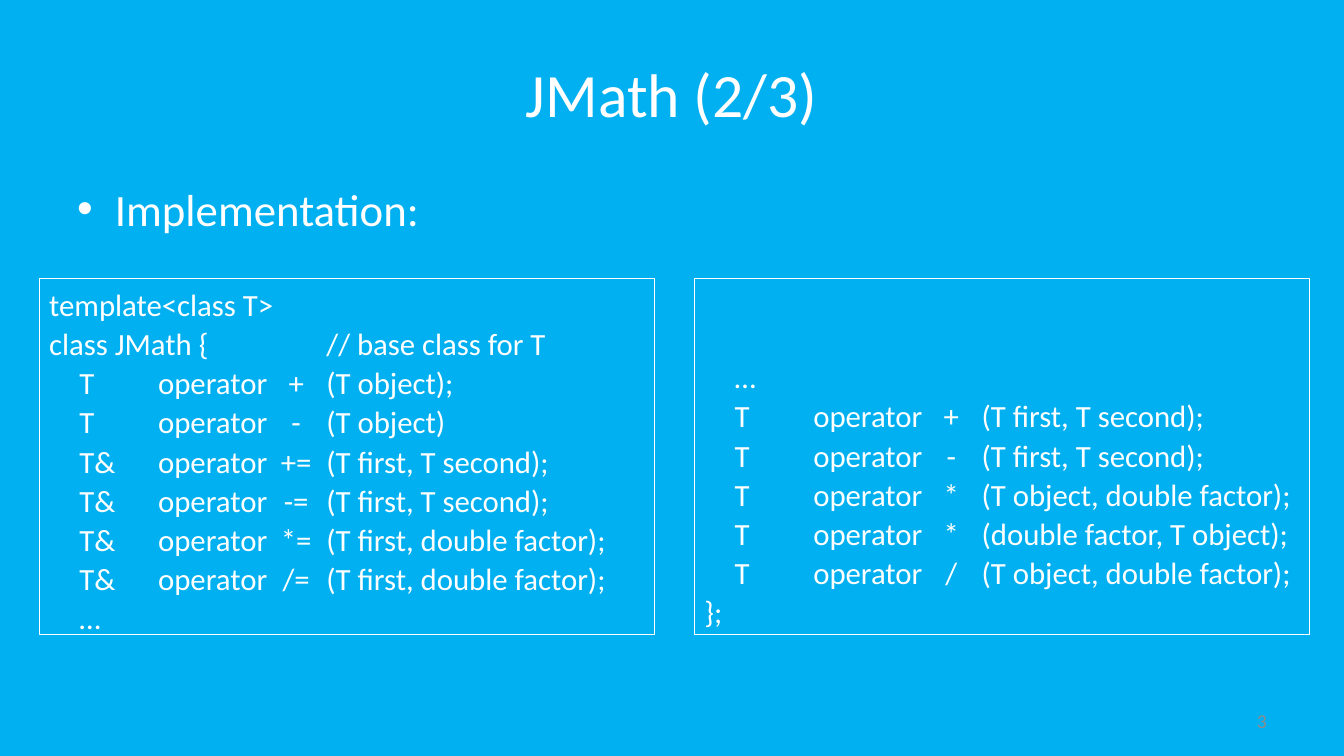
"""Build the JMath (2/3) slide with two framed code listings."""
import pptx
import pptx.util
import pptx.dml.color
import pptx.enum.shapes
import pptx.enum.text
import pptx.oxml.ns
import lxml.etree

Pt = pptx.util.Pt
Color = pptx.dml.color.RGBColor
Align = pptx.enum.text.PP_ALIGN
Anchor = pptx.enum.text.MSO_ANCHOR
qn = pptx.oxml.ns.qn

SKY = Color(0x00, 0xB0, 0xF0)
WHITE = Color(0xFF, 0xFF, 0xFF)
GRAY = Color(0x8C, 0x8C, 0x8C)

TITLE = "JMath (2/3)"
TOPIC = "Implementation:"
NUMBER = "3"
MEMBERS = [
    "template<class T>",
    "class JMath {\t\t// base class for T",
    "\tT\toperator\t+\t(T object);",
    "\tT\toperator\t-\t(T object)",
    "\tT&\toperator\t+=\t(T first, T second);",
    "\tT&\toperator\t-=\t(T first, T second);",
    "\tT&\toperator\t*=\t(T first, double factor);",
    "\tT&\toperator\t/=\t(T first, double factor);",
    "\t…",
]
FRIENDS = [
    "\t…",
    "\tT\toperator\t+\t(T first, T second);",
    "\tT\toperator\t-\t(T first, T second);",
    "\tT\toperator\t*\t(T object, double factor);",
    "\tT\toperator\t*\t(double factor, T object);",
    "\tT\toperator\t/\t(T object, double factor);",
    "};",
]
PANELS = [(MEMBERS, Anchor.TOP), (FRIENDS, Anchor.BOTTOM)]
TABS = [(21.6, "l"), (77.8, "l"), (176.4, "ctr"), (198, "l"), (388.8, "l")]

WIDE, HIGH = 960, 540
EDGE = 48
LEFT, TOP = 28.1, 198.7
PANEL_W, PANEL_H = 439.2, 254.9
STEP = 468


def write(shape, lines, size, color, anchor, **style):
    frame = shape.text_frame
    frame.word_wrap = True
    frame.vertical_anchor = anchor
    for index, line in enumerate(lines):
        para = frame.add_paragraph() if index else frame.paragraphs[0]
        for name, value in style.items():
            setattr(para, name, value)
        run = para.add_run()
        run.text = line
        look = {"name": "Calibri", "size": Pt(size)}
        for name, value in look.items():
            setattr(run.font, name, value)
        run.font.color.rgb = color
    return frame.paragraphs


def add_text(slide, box, *text, **style):
    shape = slide.shapes.add_textbox(*map(Pt, box))
    return write(shape, *text, **style)


def add_bullet(para, indent):
    props = para._p.get_or_add_pPr()
    props.set("marL", str(Pt(indent)))
    props.set("indent", str(Pt(-indent)))
    lxml.etree.SubElement(props, qn("a:buFont"), typeface="Arial")
    lxml.etree.SubElement(props, qn("a:buChar"), char="•")


def add_tabs(para):
    props = para._p.get_or_add_pPr()
    stops = lxml.etree.SubElement(props, qn("a:tabLst"))
    for place, side in TABS:
        lxml.etree.SubElement(stops, qn("a:tab"), pos=str(Pt(place)), algn=side)


def add_panel(slide, left, lines, anchor):
    box = (left, TOP, PANEL_W, PANEL_H)
    kind = pptx.enum.shapes.MSO_SHAPE.RECTANGLE
    shape = slide.shapes.add_shape(kind, *map(Pt, box))
    shape.shadow.inherit = False
    shape.fill.background()
    shape.line.color.rgb = WHITE
    shape.line.width = Pt(0.75)
    paras = write(shape, lines, 22, WHITE, anchor,
                  alignment=Align.LEFT, line_spacing=Pt(28))
    for para in paras:
        add_tabs(para)


def main():
    deck = pptx.Presentation()
    deck.slide_width, deck.slide_height = Pt(WIDE), Pt(HIGH)
    slide = deck.slides.add_slide(deck.slide_layouts[6])
    fill = slide.background.fill
    fill.solid()
    fill.fore_color.rgb = SKY

    span = WIDE - 2 * EDGE
    add_text(slide, (EDGE, 21.6, span, 90), [TITLE], 44, WHITE,
             Anchor.MIDDLE, alignment=Align.CENTER)
    add_text(slide, (688, 500.5, 224, 28.8), [NUMBER], 14, GRAY,
             Anchor.MIDDLE, alignment=Align.RIGHT)
    topic = add_text(slide, (EDGE, 126, span, 356.4), [TOPIC], 32, WHITE,
                     Anchor.TOP, space_before=Pt(6.4))
    add_bullet(topic[0], 27)

    for index, (lines, anchor) in enumerate(PANELS):
        add_panel(slide, LEFT + index * STEP, lines, anchor)
    deck.save("out.pptx")


if __name__ == "__main__":
    main()
